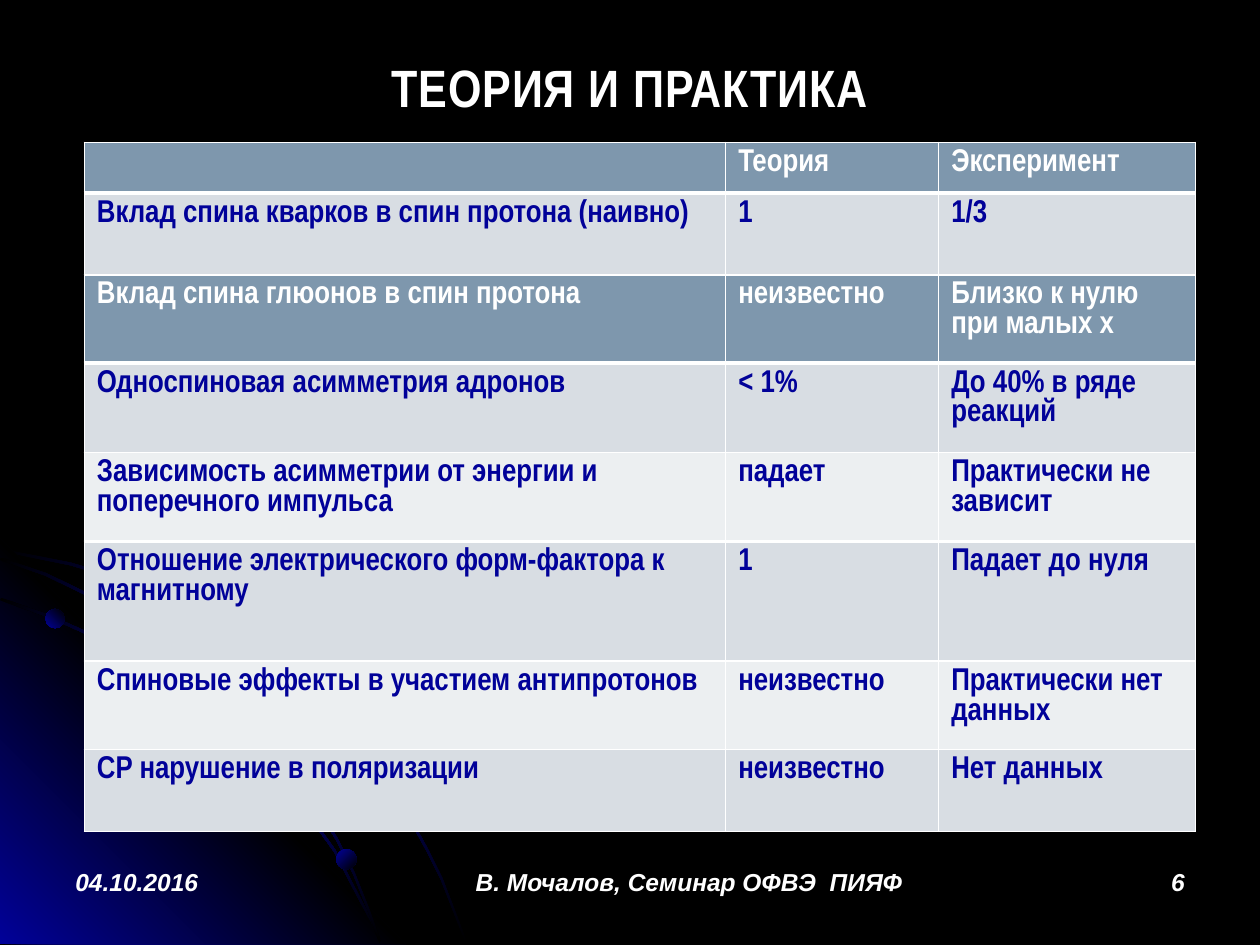
"""Build the slide that sets theory against experiment in spin physics."""
import pptx
import pptx.dml.color
import pptx.enum.shapes
import pptx.enum.text
import pptx.oxml
import pptx.oxml.ns
import pptx.util

Pt = pptx.util.Pt
ALIGN = pptx.enum.text.PP_ALIGN
HUES = {"black": "000000", "blue": "010199", "white": "FFFFFF",
        "head": "7E97AD", "band": "D8DDE3", "pale": "ECEFF1"}
GLOW = ("black", "blue", "black")
ARCS = [
    [(0, 315), (20, 319), (40, 323), (70, 332), (97, 344), (125, 359),
     (150, 377), (174, 395), (195, 417), (215, 441), (233, 467),
     (243, 485), (252, 503), (259, 521), (266, 539)],
    [(0, 343), (28, 353), (55, 365), (83, 380), (108, 397), (132, 416),
     (153, 438), (173, 462), (191, 487), (205, 514), (212, 527), (217, 539)],
    [(0, 320), (26, 329), (53, 342), (78, 356), (102, 373), (125, 392),
     (145, 414), (163, 436), (181, 462), (192, 480), (202, 500),
     (210, 520), (217, 539)],
]
BALLS = [(26, 348, 11, 315), (192.2, 485.3, 11.5, 45), (98.6, 340.6, 15, 315)]
COLS = (366.5, 121.7, 146.9)
TABLES = [
    (81.4, [(27.4, "head", ("", "Теория", "Эксперимент")),
            (46.8, "band", ("Вклад спина кварков в спин протона (наивно)",
                            "1", "1/3"))]),
    (157, [(51.1, "head", ("Вклад спина глюонов в спин протона",
                           "неизвестно", "Близко к нулю при малых x"))]),
    (207.4, [(51.1, "band", ("Односпиновая асимметрия адронов",
                             "< 1%", "До 40% в ряде реакций"))]),
    (258.5, [(48.2, "pale",
              ("Зависимость асимметрии от энергии и поперечного импульса",
               "падает", "Практически не зависит"))]),
    (309.6, [(68, "band",
              ("Отношение электрического форм-фактора к магнитному",
               "1", "Падает до нуля"))]),
    (378, [(48.2, "pale", ("Спиновые эффекты в участием антипротонов",
                           "неизвестно", "Практически нет данных"))]),
    (428.4, [(46.8, "band", ("CP нарушение в поляризации",
                             "неизвестно", "Нет данных"))]),
]
NOTES = [(36, 167.8, "04.10.2016", ALIGN.LEFT),
         (212.4, 362.9, "В. Мочалов, Семинар ОФВЭ  ПИЯФ", ALIGN.CENTER),
         (598.3, 85.7, "6", ALIGN.RIGHT)]


def tint(name):
    """Return the named colour."""
    return pptx.dml.color.RGBColor.from_string(HUES[name])


def node(text):
    """Parse one drawing element."""
    return pptx.oxml.parse_xml(
        text.replace(" ", f" {pptx.oxml.ns.nsdecls('a')} ", 1))


def blend(shape, names, angle):
    """Fill a shape with evenly spaced colours, with no line or shadow."""
    step = 100000 // (len(names) - 1)
    stops = "".join(
        f'<a:gs pos="{i * step}"><a:srgbClr val="{HUES[name]}"/></a:gs>'
        for i, name in enumerate(names))
    shape.line.fill.background()
    shape.shadow.inherit = False
    shape._element.spPr.find(pptx.oxml.ns.qn("a:ln")).addprevious(node(
        f'<a:gradFill rotWithShape="1"><a:gsLst>{stops}</a:gsLst>'
        f'<a:lin ang="{angle * 60000}" scaled="0"/></a:gradFill>'))


def trace(slide, dots, names, angle):
    """Draw a closed outline through the dots."""
    first, *rest = [(Pt(x), Pt(y)) for x, y in dots]
    pen = slide.shapes.build_freeform(*first)
    pen.add_line_segments(rest, close=True)
    blend(pen.convert_to_shape(), names, angle)


def write(para, text, size, face, hue):
    """Add one bold run and return it."""
    run = para.add_run()
    run.text = text
    font = run.font
    font.size, font.name, font.bold = Pt(size), face, True
    font.color.rgb = tint(hue)
    return run


def scene(slide):
    """Draw the glowing corner with its arcs and balls."""
    fill = slide.background.fill
    fill.solid()
    fill.fore_color.rgb = tint("black")
    bands = [arc + [(x + 0.7, y - 1.4) for x, y in reversed(arc)]
             for arc in ARCS]
    trace(slide, bands[0], GLOW, 45)
    trace(slide, [(232, 539.5), (0, 539.5), (0, 307.5)],
          ("blue", "black", "blue"), 315)
    for band in bands[1:]:
        trace(slide, band, GLOW, 45)
    for x, y, size, angle in BALLS:
        ball = slide.shapes.add_shape(pptx.enum.shapes.MSO_SHAPE.OVAL,
                                      Pt(x), Pt(y), Pt(size), Pt(size))
        blend(ball, ("blue", "black"), angle)


def title(slide, text):
    """Place and fill the title."""
    box = slide.shapes.title
    box.left, box.top, box.width, box.height = map(Pt, (36, 21.6, 648, 55.4))
    frame = box.text_frame
    frame.vertical_anchor = pptx.enum.text.MSO_ANCHOR.MIDDLE
    para = frame.paragraphs[0]
    para.alignment = ALIGN.CENTER
    run = write(para, text, 30, "Arial Narrow", "white")
    run._r.get_or_add_rPr().set("spc", "50")


def note(slide, left, width, text, align):
    """Add one part of the foot line."""
    box = slide.shapes.add_textbox(Pt(left), Pt(491.8), Pt(width), Pt(36))
    box.text_frame.word_wrap = True
    para = box.text_frame.paragraphs[0]
    para.alignment = align
    write(para, text, 14, "Arial", "white").font.italic = True


def style(cell, text, kind, top, base):
    """Edge, fill and write one cell."""
    props = cell._tc.get_or_add_tcPr()
    for side, width in zip("LRTB", (1, 1, top, base)):
        props.append(node(
            f'<a:ln{side} w="{Pt(width)}"><a:solidFill>'
            f'<a:srgbClr val="{HUES["white"]}"/></a:solidFill></a:ln{side}>'))
    cell.fill.solid()
    cell.fill.fore_color.rgb = tint(kind)
    para = cell.text_frame.paragraphs[0]
    if text:
        write(para, text, 18, "Arial Narrow",
              "white" if kind == "head" else "blue")
    else:
        para._p.append(node('<a:endParaRPr sz="1600"/>'))


def grid(slide, y, rows, prior):
    """Add one table and return the kind of its last row."""
    tall = sum(row[0] for row in rows)
    table = slide.shapes.add_table(len(rows), len(COLS), Pt(48.2), Pt(y),
                                   Pt(sum(COLS)), Pt(tall)).table
    table.horz_banding = False
    for col, width in zip(table.columns, COLS):
        col.width = Pt(width)
    for row, (height, kind, texts) in zip(table.rows, rows):
        row.height = Pt(height)
        top = 3 if prior == "head" else 1
        base = 3 if kind == "head" else 1
        for cell, text in zip(row.cells, texts):
            style(cell, text, kind, top, base)
        prior = kind
    return prior


def main():
    """Build and save the slide."""
    deck = pptx.Presentation()
    deck.slide_width, deck.slide_height = Pt(720), Pt(540)
    slide = deck.slides.add_slide(deck.slide_layouts[5])
    scene(slide)
    title(slide, "ТЕОРИЯ И ПРАКТИКА")
    for part in NOTES:
        note(slide, *part)
    prior = None
    for y, rows in TABLES:
        prior = grid(slide, y, rows, prior)
    deck.save("out.pptx")


if __name__ == "__main__":
    main()
